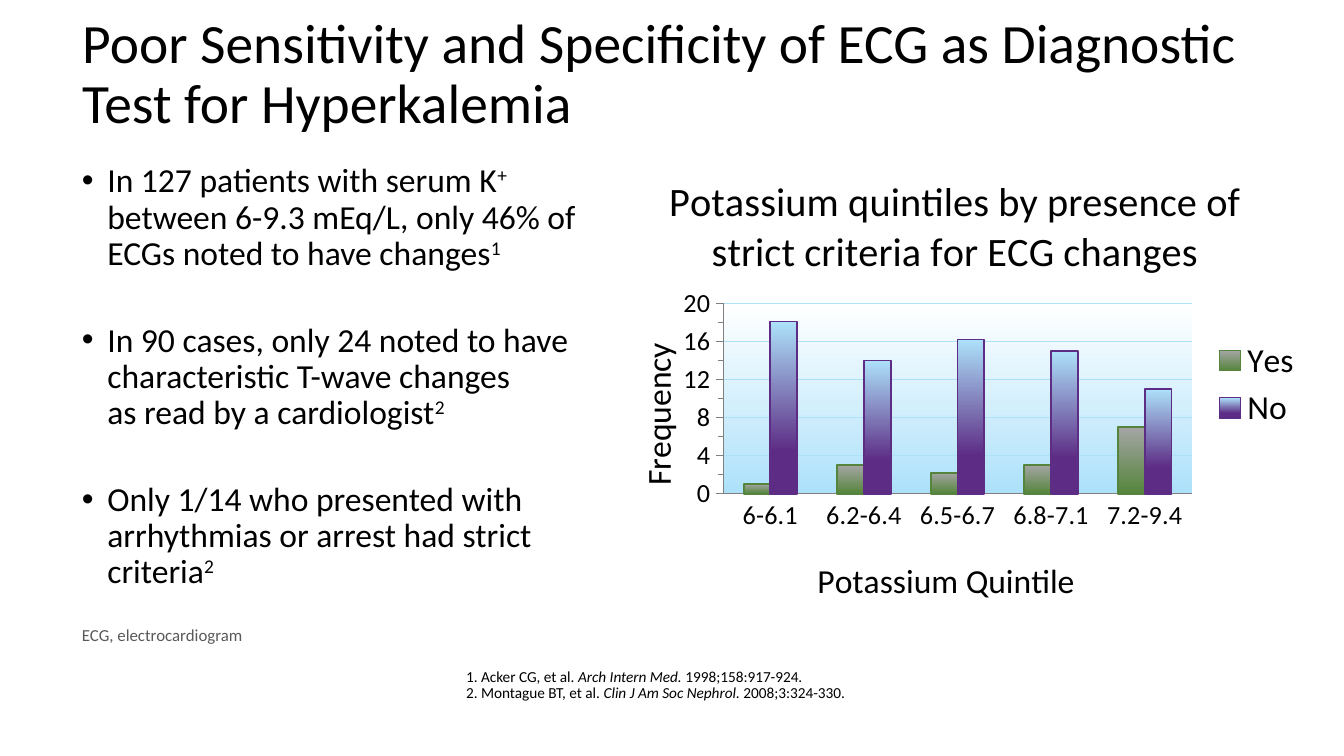
from dataclasses import dataclass
from lxml.etree import SubElement
from pptx import Presentation
from pptx.chart.data import CategoryChartData
from pptx.dml.color import RGBColor
from pptx.dml.fill import FillFormat
from pptx.enum.chart import XL_CHART_TYPE, XL_LEGEND_POSITION, XL_TICK_MARK
from pptx.enum.text import MSO_ANCHOR, PP_ALIGN
from pptx.oxml.ns import qn
from pptx.util import Cm, Pt


@dataclass(frozen=True)
class Theme:
    """Colours, font and type sizes of the slide."""
    font: str = "Calibri"
    text: str = "000000"
    muted: str = "595959"
    axis: str = "808080"
    sky: str = "ADE1FA"
    white: str = "FFFFFF"
    grey: str = "A5A5A5"
    green: str = "55853C"
    purple: str = "5D2D85"
    title: float = 29.7
    chart_title: float = 21.6
    body: float = 18
    tick: float = 14
    note: float = 9
    reference: float = 8.2


T = Theme()
SUP = {"sup": True}
ITALIC = {"italic": True}
FINDINGS = [
    [("In 127 patients with serum K", {}), ("+", SUP),
     (" between 6-9.3 mEq/L, only 46% of ECGs noted to have changes", {}), ("1", SUP)],
    [("In 90 cases, only 24 noted to have characteristic T-wave changes\nas read by a cardiologist", {}),
     ("2", SUP)],
    [("Only 1/14 who presented with arrhythmias or arrest had strict criteria", {}), ("2", SUP)],
]
REFERENCES = [
    [("1. Acker CG, et al. ", {}), ("Arch Intern Med.", ITALIC), (" 1998;158:917-924.", {})],
    [("2. Montague BT, et al. ", {}), ("Clin J Am Soc Nephrol.", ITALIC), (" 2008;3:324-330.", {})],
]
QUINTILES = ["6-6.1", "6.2-6.4", "6.5-6.7", "6.8-7.1", "7.2-9.4"]
SERIES = [
    ("Yes", [1, 3, 2.2, 3, 7], T.grey, T.green, 1),
    ("No", [18.1, 14, 16.2, 15, 11], T.sky, T.purple, 0.75),
]


def set_font(font, size, color=T.text, italic=False):
    """Apply the theme font with a size and colour."""
    font.name, font.size, font.bold, font.italic = T.font, Pt(size), False, italic
    font.color.rgb = RGBColor.from_string(color)


def add_text(p, text, size=T.body, color=T.text, italic=False, sup=False):
    """Append formatted text to a paragraph, with line breaks at newlines."""
    for i, line in enumerate(text.split("\n")):
        if i:
            p.add_line_break()
        r = p.add_run()
        r.text = line
        set_font(r.font, size, color, italic)
        if sup:
            r.font._element.set("baseline", "30000")


def add_bullet(p):
    """Give a paragraph a hanging round bullet."""
    pPr = p._p.get_or_add_pPr()
    pPr.set("marL", str(Cm(0.48)))
    pPr.set("indent", str(-Cm(0.48)))
    SubElement(pPr, qn("a:buFont")).set("typeface", "Arial")
    SubElement(pPr, qn("a:buChar")).set("char", "•")


def fill_frame(tf, paragraphs, spacing=0.9, after=0, bullet=False, **fmt):
    """Write paragraphs made of (text, format) parts into a text frame."""
    tf.word_wrap = True
    for i, parts in enumerate(paragraphs):
        p = tf.add_paragraph() if i else tf.paragraphs[0]
        if bullet:
            add_bullet(p)
        p.alignment = PP_ALIGN.LEFT
        p.line_spacing = spacing
        p.space_before, p.space_after = Pt(0), Pt(after)
        for text, extra in parts:
            add_text(p, text, **fmt, **extra)


def add_title(s, text):
    """Place and fill the title placeholder."""
    sp = s.shapes.title
    sp.left, sp.top, sp.width, sp.height = Cm(1.3), Cm(0.05), Cm(22.35), Cm(2.77)
    sp.text_frame.vertical_anchor = MSO_ANCHOR.MIDDLE
    fill_frame(sp.text_frame, [[(text, {})]], size=T.title)


def add_box(s, box, paragraphs, **fmt):
    """Add a text box at a (left, top, width, height) in centimetres."""
    sp = s.shapes.add_textbox(*map(Cm, box))
    fill_frame(sp.text_frame, paragraphs, **fmt)


def fill_gradient(fill, top, bottom, end=1):
    """Fill from a top colour down to a bottom colour."""
    fill.gradient()
    fill.gradient_angle = 270
    for stop, color, position in zip(fill.gradient_stops, (top, bottom), (0, end)):
        stop.color.rgb = RGBColor.from_string(color)
        stop.position = position


def set_line(line, color, width):
    """Set a solid line colour and width."""
    line.color.rgb = RGBColor.from_string(color)
    line.width = Pt(width)


def place(el, **fractions):
    """Give a chart part a manual layout in fractions of the chart."""
    for old in el.findall(qn("c:layout")):
        el.remove(old)
    layout = SubElement(el, qn("c:layout"))
    overlay = el.find(qn("c:overlay"))
    if overlay is None:
        el.insert(0, layout)
    else:
        overlay.addprevious(layout)
    manual = SubElement(layout, qn("c:manualLayout"))
    if "w" in fractions:
        SubElement(manual, qn("c:layoutTarget")).set("val", "inner")
    for key in "xy":
        SubElement(manual, qn(f"c:{key}Mode")).set("val", "edge")
    for key, value in fractions.items():
        SubElement(manual, qn(f"c:{key}")).set("val", str(value))


def set_chart_title(title, lines, size, x, y):
    """Write and place a chart or axis title, one paragraph per line."""
    tf = title.text_frame
    for i, line in enumerate(lines):
        p = tf.add_paragraph() if i else tf.paragraphs[0]
        add_text(p, line, size=size)
    place(title._element, x=x, y=y)


def format_axis(axis, title, tick, x, y):
    """Format an axis with its title, ticks and line."""
    set_chart_title(axis.axis_title, [title], T.body, x, y)
    axis.major_tick_mark = axis.minor_tick_mark = tick
    set_font(axis.tick_labels.font, T.tick)
    set_line(axis.format.line, T.axis, 0.5)


def format_value_axis(axis):
    """Format the frequency axis, its scale and gridlines."""
    format_axis(axis, "Frequency", XL_TICK_MARK.OUTSIDE, 0.06, 0.4)
    axis.axis_title._element.find(".//" + qn("a:bodyPr")).set("rot", "-5400000")
    axis.minimum_scale, axis.maximum_scale = 0, 20
    axis.major_unit, axis.minor_unit = 4, 2
    axis.has_major_gridlines = True
    set_line(axis.major_gridlines.format.line, T.sky, 0.75)


def add_column_chart(s, box):
    """Add the clustered columns of frequency by potassium quintile."""
    data = CategoryChartData()
    data.categories = QUINTILES
    for name, values, *_ in SERIES:
        data.add_series(name, values)
    chart = s.shapes.add_chart(XL_CHART_TYPE.COLUMN_CLUSTERED, *map(Cm, box), data).chart
    set_font(chart.font, T.body)
    set_chart_title(chart.chart_title,
                    ["Potassium quintiles by presence of", "strict criteria for ECG changes"],
                    T.chart_title, 0.11, 0.05)
    format_axis(chart.category_axis, "Potassium Quintile", XL_TICK_MARK.NONE, 0.31, 0.85)
    format_value_axis(chart.value_axis)
    chart.has_legend = True
    chart.legend.position = XL_LEGEND_POSITION.RIGHT
    chart.legend.include_in_layout = False
    set_font(chart.legend.font, T.body)
    plot = chart.plots[0]
    plot.gap_width, plot.overlap, plot.vary_by_categories = 150, 0, False
    for series, (_, _, top, bottom, end) in zip(plot.series, SERIES):
        fill_gradient(series.format.fill, top, bottom, end)
        set_line(series.format.line, bottom, 1)
    area = chart._chartSpace.chart.plotArea
    place(area, x=0.19, y=0.33, w=0.64, h=0.4)
    spPr = SubElement(area, qn("c:spPr"))
    fill_gradient(FillFormat.from_fill_parent(spPr), T.white, T.sky)


def main():
    """Build the slide and save it."""
    prs = Presentation()
    prs.slide_width, prs.slide_height = Cm(25.4), Cm(14.29)
    s = prs.slides.add_slide(prs.slide_layouts[5])
    add_title(s, "Poor Sensitivity and Specificity of ECG as Diagnostic Test for Hyperkalemia")
    add_box(s, (1.3, 2.97, 10.13, 8.79), FINDINGS, after=27, bullet=True)
    add_box(s, (8.56, 12.52, 16.33, 1.52), REFERENCES, size=T.reference)
    add_column_chart(s, (11.05, 2.77, 13.82, 8.99))
    add_box(s, (1.3, 11.79, 23.6, 0.56), [[("ECG, electrocardiogram", {})]],
            spacing=0.7, size=T.note, color=T.muted)
    prs.save("out.pptx")


if __name__ == "__main__":
    main()
